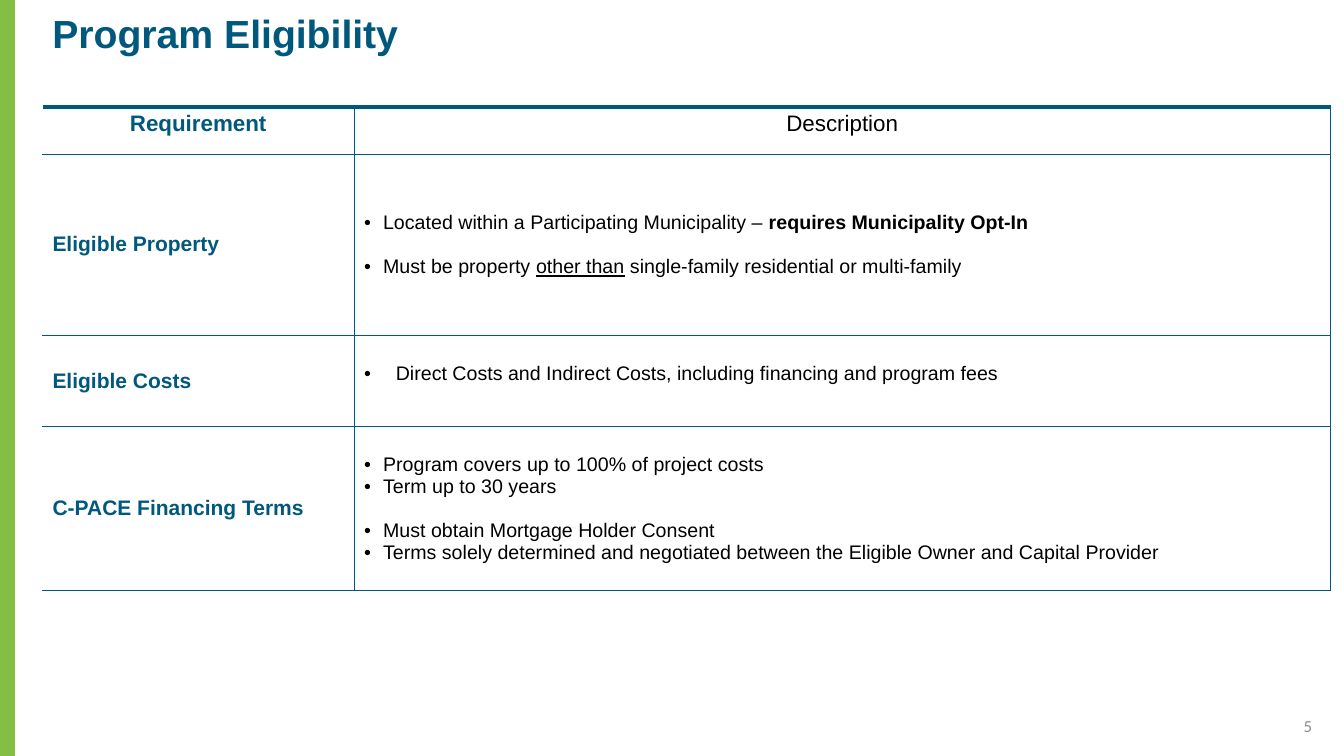
import lxml.etree
import pptx
import pptx.dml.color
import pptx.enum.shapes
import pptx.enum.text
import pptx.oxml.ns
import pptx.util

Cm = pptx.util.Cm
Pt = pptx.util.Pt
PP_ALIGN = pptx.enum.text.PP_ALIGN
ANCHOR = pptx.enum.text.MSO_ANCHOR

COLORS = {"green": "84BF43", "blue": "00597C", "black": "000000",
          "gray": "8C8C8C", "white": "FFFFFF"}
TITLE = {"size": Pt(28), "name": "Arial", "bold": True}
HEADER = {"size": Pt(16), "name": "Arial", "bold": False}
LABEL = {"size": Pt(15), "name": "Arial", "bold": True}
BODY = {"size": Pt(14), "name": "Arial", "bold": False}
NUMBER = {"size": Pt(12), "name": "Calibri"}

COLUMN_WIDTHS = (7.85, 24.61)
ROW_HEIGHTS = (1.19, 4.57, 2.29, 4.14)
GAP = 16

# Each bullet: space before in points, then (text, extra format) runs.
REQUIREMENTS = [
    {"label": "Eligible Property", "bullets": [
        (0, [("Located within a Participating Municipality – ", {}),
             ("requires Municipality Opt-In", {"bold": True})]),
        (GAP, [("Must be property ", {}),
               ("other than", {"underline": True}),
               (" single-family residential or multi-family", {})]),
    ]},
    {"label": "Eligible Costs", "indent": 0.8, "anchor": ANCHOR.TOP, "margin_top": 0.69,
     "bullets": [
         (0, [("Direct Costs and Indirect Costs, including financing and program fees", {})]),
     ]},
    {"label": "C-PACE Financing Terms", "bullets": [
        (0, [("Program covers up to 100% of project costs", {})]),
        (0, [("Term up to 30 years", {})]),
        (GAP, [("Must obtain Mortgage Holder Consent", {})]),
        (0, [("Terms solely determined and negotiated between the "
              "Eligible Owner and Capital Provider", {})]),
    ]},
]


def rgb(color):
    return pptx.dml.color.RGBColor.from_string(COLORS[color])


class SlideBuilder:
    def __init__(self, slide):
        self.slide = slide

    def styled_run(self, paragraph, text, style, color):
        run = paragraph.add_run()
        run.text = text
        for attribute, value in style.items():
            setattr(run.font, attribute, value)
        run.font.color.rgb = rgb(color)

    def bar(self, left, top, width, height, color):
        shape = self.slide.shapes.add_shape(
            pptx.enum.shapes.MSO_SHAPE.RECTANGLE, Cm(left), Cm(top), Cm(width), Cm(height))
        shape.shadow.inherit = False
        shape.fill.solid()
        shape.fill.fore_color.rgb = rgb(color)
        shape.line.fill.background()

    def text(self, box, text, style, color, anchor=ANCHOR.TOP, **paragraph_format):
        frame = self.slide.shapes.add_textbox(*map(Cm, box)).text_frame
        frame.word_wrap = True
        frame.vertical_anchor = anchor
        paragraph = frame.paragraphs[0]
        for attribute, value in paragraph_format.items():
            setattr(paragraph, attribute, value)
        self.styled_run(paragraph, text, style, color)

    def table(self, left, top, widths, heights):
        table = self.slide.shapes.add_table(
            len(heights), len(widths), Cm(left), Cm(top),
            Cm(sum(widths)), Cm(sum(heights))).table
        table.first_row = table.horz_banding = False
        for column, width in zip(table.columns, widths):
            column.width = Cm(width)
        for row, height in zip(table.rows, heights):
            row.height = Cm(height)
        for row_index in range(len(heights)):
            for column_index in range(len(widths)):
                cell = table.cell(row_index, column_index)
                cell.fill.solid()
                cell.fill.fore_color.rgb = rgb("white")
                self.borders(cell, {
                    "lnL": ("blue", 0.5) if column_index else ("white", 1),
                    "lnR": ("blue", 0.5),
                    "lnT": ("blue", 0.5) if row_index else ("blue", 3),
                    "lnB": ("blue", 0.5)})
        return table

    def borders(self, cell, sides):
        qn = pptx.oxml.ns.qn
        properties = cell._tc.get_or_add_tcPr()
        for index, (side, (color, width)) in enumerate(sides.items()):
            line = lxml.etree.Element(qn(f"a:{side}"), w=str(Pt(width)))
            fill = lxml.etree.SubElement(line, qn("a:solidFill"))
            lxml.etree.SubElement(fill, qn("a:srgbClr"), val=COLORS[color])
            properties.insert(index, line)

    def cell_text(self, cell, text, style, color, anchor, alignment):
        cell.vertical_anchor = anchor
        paragraph = cell.text_frame.paragraphs[0]
        paragraph.alignment = alignment
        self.styled_run(paragraph, text, style, color)

    def cell_bullets(self, cell, bullets, indent=0.48, anchor=ANCHOR.MIDDLE, margin_top=0.13):
        cell.vertical_anchor = anchor
        cell.margin_top = Cm(margin_top)
        frame = cell.text_frame
        for index, (space_before, runs) in enumerate(bullets):
            paragraph = frame.add_paragraph() if index else frame.paragraphs[0]
            if space_before:
                paragraph.space_before = Pt(space_before)
            properties = paragraph._p.get_or_add_pPr()
            properties.set("marL", str(Cm(indent)))
            properties.set("indent", str(-Cm(indent)))
            for tag, name, value in (("buFont", "typeface", "Arial"), ("buChar", "char", "•")):
                element = lxml.etree.SubElement(properties, pptx.oxml.ns.qn(f"a:{tag}"))
                element.set(name, value)
            for text, extra in runs:
                self.styled_run(paragraph, text, BODY | extra, "black")


def main():
    presentation = pptx.Presentation()
    presentation.slide_width = Cm(33.87)
    presentation.slide_height = Cm(19.05)
    builder = SlideBuilder(presentation.slides.add_slide(presentation.slide_layouts[6]))

    builder.bar(0, 0, 0.38, 19.05, "green")
    builder.text((1.07, 0.25, 32.26, 2.44), "Program Eligibility", TITLE, "blue",
                 line_spacing=0.9)
    builder.text((25.7, 17.78, 7.62, 1.02), "5", NUMBER, "gray", ANCHOR.MIDDLE,
                 alignment=PP_ALIGN.RIGHT)

    table = builder.table(1.07, 2.69, COLUMN_WIDTHS, ROW_HEIGHTS)
    builder.cell_text(table.cell(0, 0), "Requirement", HEADER | {"bold": True}, "blue",
                      ANCHOR.TOP, PP_ALIGN.CENTER)
    builder.cell_text(table.cell(0, 1), "Description", HEADER, "black",
                      ANCHOR.TOP, PP_ALIGN.CENTER)
    for row_index, requirement in enumerate(REQUIREMENTS, start=1):
        details = dict(requirement)
        builder.cell_text(table.cell(row_index, 0), details.pop("label"), LABEL, "blue",
                          ANCHOR.MIDDLE, PP_ALIGN.LEFT)
        builder.cell_bullets(table.cell(row_index, 1), **details)

    presentation.save("out.pptx")


if __name__ == "__main__":
    main()
